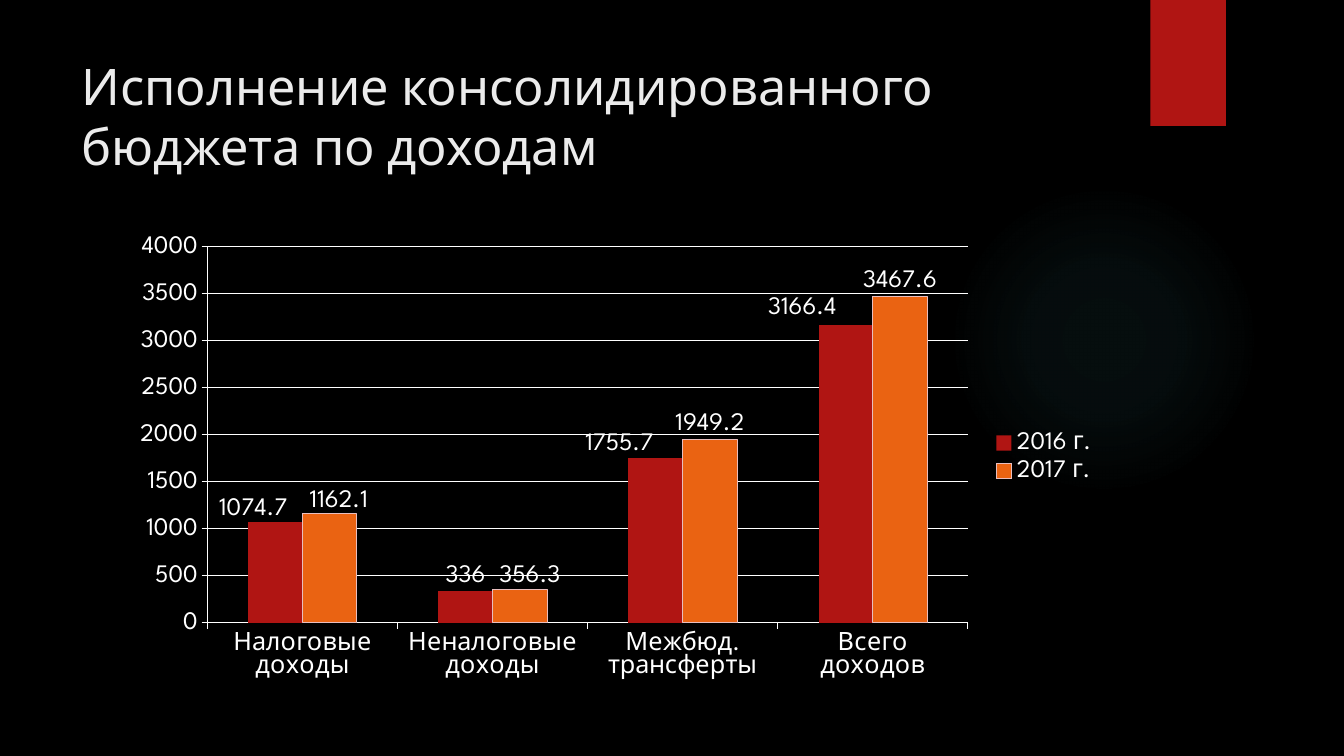
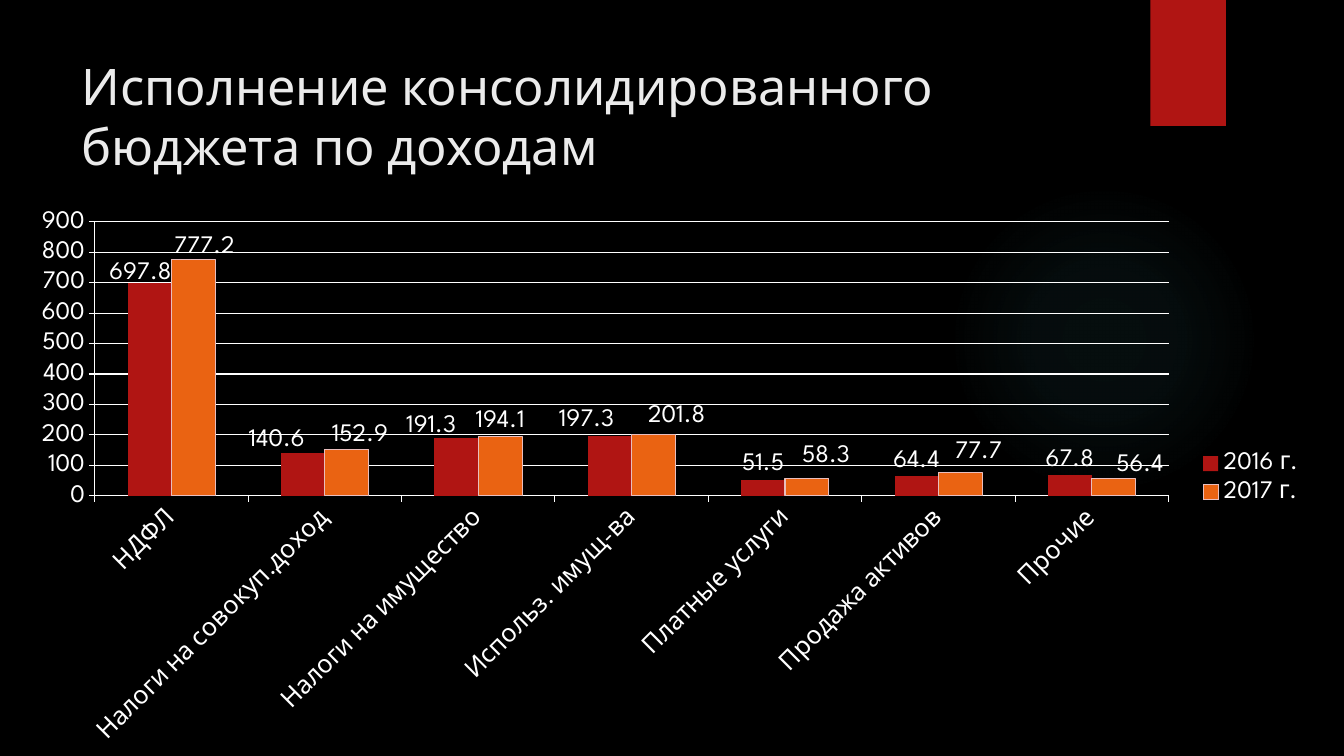
from dataclasses import dataclass

import lxml.etree
import pptx
import pptx.chart.data
import pptx.dml.color
import pptx.enum.chart
import pptx.enum.shapes
import pptx.enum.text
import pptx.oxml
import pptx.oxml.ns
import pptx.util

Inches = pptx.util.Inches
Pt = pptx.util.Pt
qn = pptx.oxml.ns.qn
DRAWING = 'xmlns:a="http://schemas.openxmlformats.org/drawingml/2006/main"'


@dataclass(frozen=True)
class Theme:
    font: str = "League Spartan"
    black: str = "000000"
    white: str = "FFFFFF"
    title: str = "EBEBEB"
    red: str = "B01513"
    orange: str = "EA6312"
    edge: str = "E8BEBE"
    glow: str = "50B9C1"
    title_size: float = 36
    title_pitch: float = 43
    chart_size: float = 18
    line: float = 0.75


THEME = Theme()


@dataclass(frozen=True)
class Box:
    left: float
    top: float
    width: float
    height: float

    def lengths(self):
        return [Inches(side) for side in (self.left, self.top, self.width, self.height)]


def color(code):
    return pptx.dml.color.RGBColor.from_string(code)


def apply(target, values):
    for name, value in values.items():
        setattr(target, name, value)


def style_font(font, size, code):
    apply(font, {"name": THEME.font, "size": Pt(size)})
    font.color.rgb = color(code)


def style_line(line, code):
    line.color.rgb = color(code)
    line.width = Pt(THEME.line)


def add_plain_shape(page, kind, box, code):
    shape = page.shapes.add_shape(kind, *box.lengths())
    shape.shadow.inherit = False
    shape.fill.solid()
    shape.fill.fore_color.rgb = color(code)
    shape.line.fill.background()
    return shape


def add_glow(page, box):
    glow = add_plain_shape(page, pptx.enum.shapes.MSO_SHAPE.OVAL, box, THEME.glow)
    stops = "".join(
        f'<a:gs pos="{place * 1000}"><a:srgbClr val="{THEME.glow}">'
        f'<a:alpha val="{alpha * 1000}"/></a:srgbClr></a:gs>'
        for place, alpha in ((0, 7), (36, 6), (69, 0), (100, 0))
    )
    gradient = pptx.oxml.parse_xml(
        f'<a:gradFill {DRAWING} rotWithShape="1"><a:gsLst>{stops}</a:gsLst>'
        '<a:path path="circle"><a:fillToRect l="50000" t="50000" r="50000" b="50000"/>'
        "</a:path></a:gradFill>"
    )
    properties = glow._element.spPr
    properties.replace(properties.find(qn("a:solidFill")), gradient)
    return glow


def add_band(page, box):
    band = add_plain_shape(page, pptx.enum.shapes.MSO_SHAPE.RECTANGLE, box, THEME.red)
    band._element.spPr.find(qn("a:effectLst")).append(pptx.oxml.parse_xml(
        f'<a:outerShdw {DRAWING} blurRad="{Pt(3)}" dist="{Pt(2)}" dir="5400000" '
        f'rotWithShape="0"><a:srgbClr val="{THEME.black}"><a:alpha val="45000"/>'
        "</a:srgbClr></a:outerShdw>"
    ))
    return band


def decorate_layout(layout, page):
    decorations = (
        add_glow(page, Box(9.41, 1.83, 3.08, 3.08)),
        add_band(page, Box(11.41, 0, 0.75, 1.25)),
    )
    for shape in decorations:
        layout.shapes.element.append(shape._element)


def add_title(page, text, box):
    title = page.shapes.title
    apply(title, dict(zip(("left", "top", "width", "height"), box.lengths())))
    frame = title.text_frame
    frame.text = text
    apply(frame, {
        "word_wrap": True,
        "auto_size": pptx.enum.text.MSO_AUTO_SIZE.NONE,
        "vertical_anchor": pptx.enum.text.MSO_ANCHOR.TOP,
    })
    para = frame.paragraphs[0]
    apply(para, {
        "alignment": pptx.enum.text.PP_ALIGN.LEFT,
        "line_spacing": Pt(THEME.title_pitch),
    })
    style_font(para.runs[0].font, THEME.title_size, THEME.title)


def manual_layout(entries):
    layout = lxml.etree.Element(qn("c:layout"))
    manual = lxml.etree.SubElement(layout, qn("c:manualLayout"))
    for name, value in entries.items():
        lxml.etree.SubElement(manual, qn(f"c:{name}")).set("val", str(value))
    return layout


def place_plot(chart, box, plot):
    area = chart._chartSpace.chart.plotArea
    for old in area.findall(qn("c:layout")):
        area.remove(old)
    area.insert(0, manual_layout({
        "layoutTarget": "inner", "xMode": "edge", "yMode": "edge",
        "x": plot.left / box.width, "y": plot.top / box.height,
        "w": plot.width / box.width, "h": plot.height / box.height,
    }))


def style_series(series, fill, edge, shifts, box):
    series.format.fill.solid()
    series.format.fill.fore_color.rgb = color(fill)
    if edge:
        style_line(series.format.line, edge)
    else:
        series.format.line.fill.background()
    series.invert_if_negative = False
    outside = pptx.enum.chart.XL_LABEL_POSITION.OUTSIDE_END
    apply(series.data_labels, {"show_value": True, "position": outside})
    for index in shifts:
        series.points[index].data_label.position = outside
    for label in series._element.iter(qn("c:dLbl")):
        mark = label.find(qn("c:idx"))
        across, down = shifts[int(mark.get("val"))]
        mark.addnext(manual_layout({"x": across / box.width, "y": down / box.height}))


def style_axes(chart, top, step, angle):
    ticks = pptx.enum.chart.XL_TICK_MARK
    for axis in (chart.category_axis, chart.value_axis):
        apply(axis, {"major_tick_mark": ticks.OUTSIDE, "minor_tick_mark": ticks.NONE})
        style_line(axis.format.line, THEME.white)
        style_font(axis.tick_labels.font, THEME.chart_size, THEME.white)
    apply(chart.value_axis, {
        "minimum_scale": 0, "maximum_scale": top, "major_unit": step,
        "has_major_gridlines": True,
    })
    style_line(chart.value_axis.major_gridlines.format.line, THEME.white)
    body = chart.category_axis._element.find(qn("c:txPr")).find(qn("a:bodyPr"))
    body.set("rot", str(angle * 60000))
    body.set("vert", "horz")


def add_income_chart(page, box, plot, categories, series_data, top, step, angle=0):
    data = pptx.chart.data.CategoryChartData()
    data.categories = categories
    for name, values, shifts in series_data:
        data.add_series(name, values)
    kind = pptx.enum.chart.XL_CHART_TYPE.COLUMN_CLUSTERED
    chart = page.shapes.add_chart(kind, *box.lengths(), data).chart
    apply(chart, {"has_title": False, "has_legend": True})
    style_font(chart.font, THEME.chart_size, THEME.white)
    apply(chart.legend, {
        "position": pptx.enum.chart.XL_LEGEND_POSITION.RIGHT,
        "include_in_layout": False,
    })
    style_font(chart.legend.font, THEME.chart_size, THEME.white)
    apply(chart.plots[0], {"gap_width": 150, "overlap": 0, "vary_by_categories": False})
    looks = ((THEME.red, None), (THEME.orange, THEME.edge))
    for series, look, entry in zip(chart.plots[0].series, looks, series_data):
        style_series(series, *look, entry[2], box)
    style_axes(chart, top, step, angle)
    place_plot(chart, box, plot)


CHARTS = (
    {
        "box": Box(1.21, 2.24, 9.78, 4.59),
        "plot": Box(0.85, 0.21, 7.54, 3.73),
        "categories": ("Налоговые доходы", "Неналоговые доходы",
                       "Межбюд. трансферты", "Всего доходов"),
        "series_data": (
            ("2016 г.", (1074.7, 336, 1755.7, 3166.4),
             {0: (-0.22, 0.03), 2: (-0.36, 0.02), 3: (-0.43, -0.02)}),
            ("2017 г.", (1162.1, 356.3, 1949.2, 3467.6),
             {0: (0.09, 0.03), 1: (0.1, 0.02)}),
        ),
        "top": 4000, "step": 500,
    },
    {
        "box": Box(0.17, 1.98, 12.87, 5.52),
        "plot": Box(0.77, 0.22, 10.65, 2.72),
        "categories": ("НДФЛ", "Налоги на совокуп.доход", "Налоги на имущество",
                       "Использ. имущ-ва", "Платные услуги", "Продажа активов", "Прочие"),
        "series_data": (
            ("2016 г.", (697.8, 140.6, 191.3, 197.3, 51.5, 64.4, 67.8),
             {0: (-0.09, 0.05), 1: (-0.26, 0.03), 2: (-0.25, 0.04), 3: (-0.23, 0)}),
            ("2017 г.", (777.2, 152.9, 194.1, 201.8, 58.3, 77.7, 56.4),
             {0: (0.11, 0.04), 1: (0.13, 0.01), 3: (0.23, -0.03),
              4: (0.19, -0.06), 5: (0.18, -0.04), 6: (0.26, 0.02)}),
        ),
        "top": 900, "step": 100, "angle": -45,
    },
)


def main():
    deck = pptx.Presentation()
    apply(deck, {"slide_width": Inches(13.33), "slide_height": Inches(7.5)})
    background = deck.slide_master.background.fill
    background.solid()
    background.fore_color.rgb = color(THEME.black)
    layout = deck.slide_layouts.get_by_name("Title Only")
    pages = [deck.slides.add_slide(layout) for chart in CHARTS]
    decorate_layout(layout, pages[0])
    for page, chart in zip(pages, CHARTS):
        add_title(page, "Исполнение консолидированного бюджета по доходам",
                  Box(0.71, 0.5, 10.29, 1.53))
        add_income_chart(page, **chart)
    deck.save("out.pptx")


if __name__ == "__main__":
    main()
